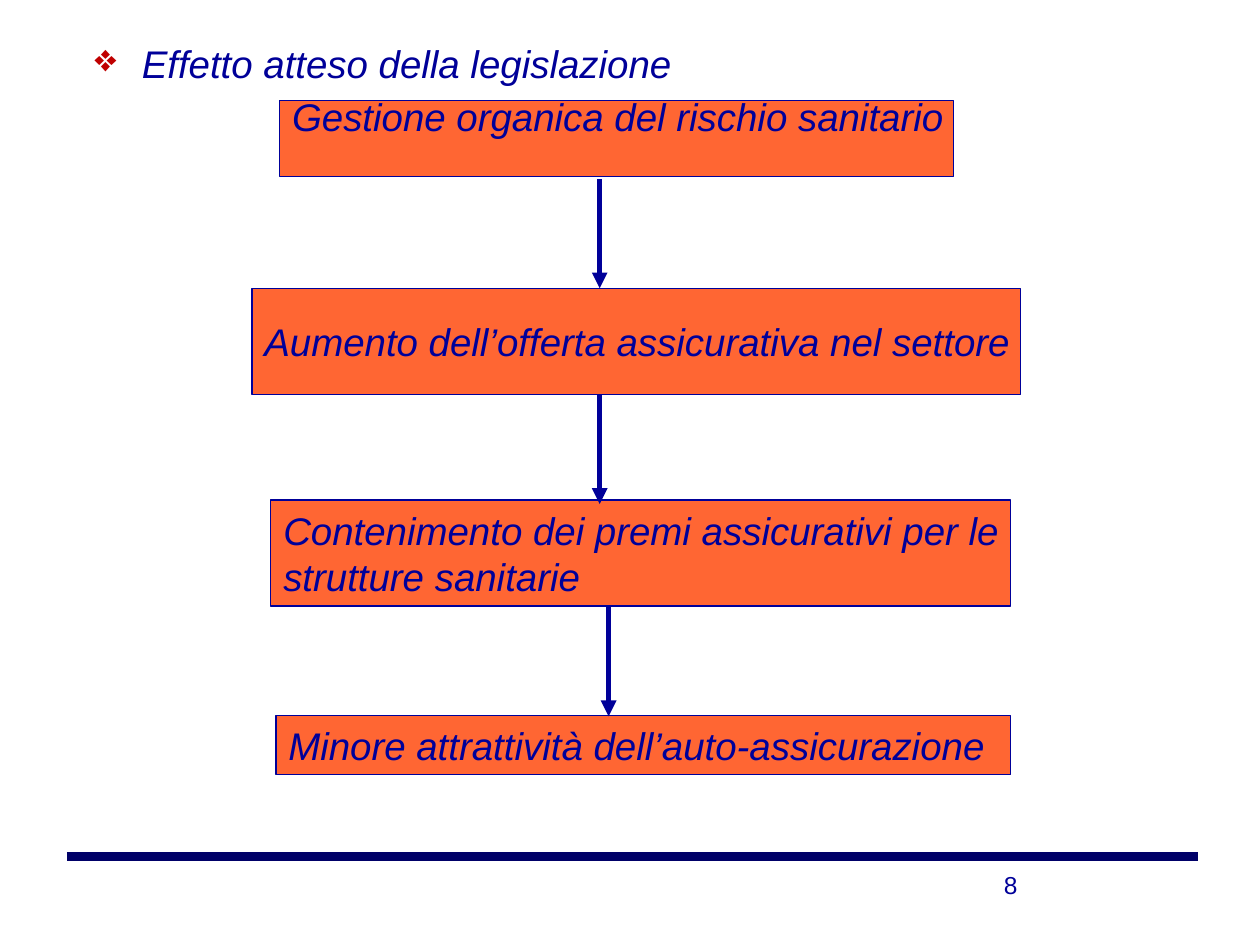
from dataclasses import dataclass

from lxml import etree
from pptx import Presentation
from pptx.dml.color import RGBColor
from pptx.enum.shapes import MSO_CONNECTOR, MSO_SHAPE
from pptx.enum.text import MSO_ANCHOR, MSO_AUTO_SIZE, PP_ALIGN
from pptx.oxml.ns import qn
from pptx.slide import Slide
from pptx.text.text import TextFrame, _Paragraph
from pptx.util import Pt

LEFT = PP_ALIGN.LEFT
TOP, MIDDLE, BOTTOM = MSO_ANCHOR.TOP, MSO_ANCHOR.MIDDLE, MSO_ANCHOR.BOTTOM
NO_FIT = MSO_AUTO_SIZE.NONE
RECT = MSO_SHAPE.RECTANGLE
STRAIGHT = MSO_CONNECTOR.STRAIGHT
TITLE_ONLY = 5


@dataclass(frozen=True)
class Theme:
    font: str = "Arial"
    ink: str = "000099"
    rule: str = "000068"
    box: str = "FF6633"
    bullet: str = "C00000"
    body_size: float = 22
    number_size: float = 14


@dataclass(frozen=True)
class Step:
    left: float
    top: float
    width: float
    height: float
    lines: tuple[str, ...]
    bottom_inset: float = 3.6


@dataclass(frozen=True)
class Line:
    x1: float
    y1: float
    x2: float
    y2: float
    color: str
    weight: float
    arrow: bool = False


THEME = Theme()

STEPS = [
    Step(159.8, 57.6, 385.2, 43.2, ("Gestione organica del rischio sanitario",), 25.3),
    Step(144, 164.9, 439.2, 60.5, ("Aumento dell’offerta assicurativa nel settore",)),
    Step(154.8, 285.8, 422.6, 60.5,
         ("Contenimento dei premi assicurativi per le", "strutture sanitarie")),
    Step(157.7, 409, 419.8, 33.8, ("Minore attrattività dell’auto-assicurazione",)),
]

ARROW_LENGTH = 62.6
ARROW_STARTS = [(342.7, 102.2), (342.7, 225.4), (347.8, 346.7)]
RULE = Line(38.2, 489.6, 684.7, 489.6, THEME.rule, 5)


def add_run(p: _Paragraph, text: str, size: float, italic: bool = True) -> None:
    r = p.add_run()
    r.text = text
    r.font.name = THEME.font
    r.font.size = Pt(size)
    r.font.bold = False
    r.font.italic = italic
    r.font.color.rgb = RGBColor.from_string(THEME.ink)


def set_frame(tf: TextFrame, anchor: MSO_ANCHOR, wrap: bool,
              top: float = 3.6, bottom: float = 3.6) -> None:
    tf.auto_size = NO_FIT
    tf.word_wrap = wrap
    tf.vertical_anchor = anchor
    tf.margin_left = tf.margin_right = Pt(7.2)
    tf.margin_top, tf.margin_bottom = Pt(top), Pt(bottom)


def add_bullet(p: _Paragraph, char: str, indent: float) -> None:
    pPr = p._p.get_or_add_pPr()
    pPr.set("marL", str(Pt(indent)))
    pPr.set("indent", str(-Pt(indent)))
    color = etree.SubElement(pPr, qn("a:buClr"))
    etree.SubElement(color, qn("a:srgbClr"), val=THEME.bullet)
    etree.SubElement(pPr, qn("a:buChar"), char=char)


def set_title(s: Slide, text: str) -> None:
    sp = s.shapes.title
    sp.left, sp.top, sp.width, sp.height = Pt(46.8), Pt(5.8), Pt(612), Pt(151.2)
    set_frame(sp.text_frame, TOP, True)
    p = sp.text_frame.paragraphs[0]
    p.alignment = LEFT
    p.line_spacing = 1.5
    p.space_before = Pt(12)
    add_bullet(p, "❖", 27)
    add_run(p, text, THEME.body_size)


def add_step(s: Slide, step: Step) -> None:
    sp = s.shapes.add_shape(RECT, Pt(step.left), Pt(step.top), Pt(step.width), Pt(step.height))
    sp.shadow.inherit = False
    sp.fill.solid()
    sp.fill.fore_color.rgb = RGBColor.from_string(THEME.box)
    sp.line.color.rgb = RGBColor.from_string(THEME.ink)
    sp.line.width = Pt(0.75)
    tf = sp.text_frame
    top = 0 if step.bottom_inset > 3.6 else 3.6
    set_frame(tf, MIDDLE, False, top, step.bottom_inset)
    for i, text in enumerate(step.lines):
        p = tf.add_paragraph() if i else tf.paragraphs[0]
        p.alignment = LEFT
        add_run(p, text, THEME.body_size)


def add_line(s: Slide, line: Line) -> None:
    sp = s.shapes.add_connector(STRAIGHT, Pt(line.x1), Pt(line.y1), Pt(line.x2), Pt(line.y2))
    sp.line.color.rgb = RGBColor.from_string(line.color)
    sp.line.width = Pt(line.weight)
    if line.arrow:
        etree.SubElement(sp.line._get_or_add_ln(), qn("a:tailEnd"), type="triangle")
    etree.SubElement(sp._element.spPr, qn("a:effectLst"))


def add_number(s: Slide, text: str) -> None:
    sp = s.shapes.add_textbox(Pt(566.6), Pt(483.8), Pt(149.8), Pt(30.2))
    set_frame(sp.text_frame, BOTTOM, False, 0, 0)
    p = sp.text_frame.paragraphs[0]
    p.alignment = LEFT
    p.line_spacing = 0.9
    add_run(p, text, THEME.number_size, italic=False)


def main() -> None:
    prs = Presentation()
    prs.slide_width, prs.slide_height = Pt(720), Pt(540)
    s = prs.slides.add_slide(prs.slide_layouts[TITLE_ONLY])
    add_line(s, RULE)
    set_title(s, "Effetto atteso della legislazione")
    for step in STEPS:
        add_step(s, step)
    for x, y in ARROW_STARTS:
        add_line(s, Line(x, y, x, y + ARROW_LENGTH, THEME.ink, 3, arrow=True))
    add_number(s, "8")
    prs.save("out.pptx")


if __name__ == "__main__":
    main()
